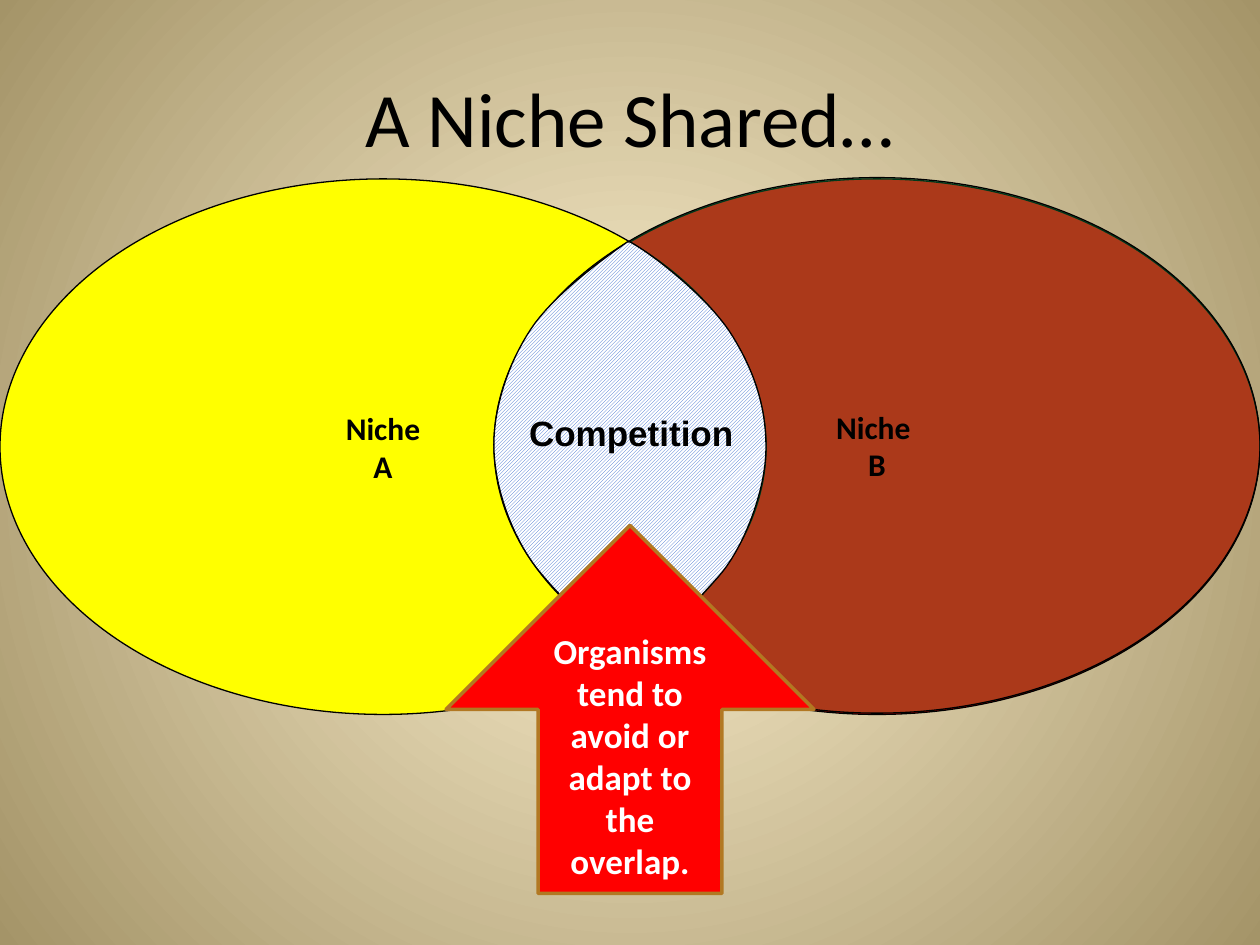
"""Build a slide with two overlapping niches and the competition between them."""
import pptx
import pptx.dml.color
import pptx.enum.dml
import pptx.enum.shapes
import pptx.enum.text
import pptx.oxml
import pptx.oxml.ns
import pptx.util

RGBColor = pptx.dml.color.RGBColor
BLACK = RGBColor(0x00, 0x00, 0x00)
WHITE = RGBColor(0xFF, 0xFF, 0xFF)
RED = RGBColor(0xFF, 0x00, 0x00)
YELLOW = RGBColor(0xFF, 0xFF, 0x00)
GREEN = RGBColor(0x00, 0xB0, 0x50)
BLUE = RGBColor(0x33, 0x66, 0xCC)
BRONZE = RGBColor(0xB2, 0x78, 0x22)
CREAM = RGBColor(0xFF, 0xF3, 0xD2)
KHAKI = RGBColor(0xA4, 0x94, 0x68)
COLUMNS, ROWS = 100, 75
CENTER = pptx.enum.text.PP_ALIGN.CENTER
MIDDLE = pptx.enum.text.MSO_ANCHOR.MIDDLE
SHAPES = pptx.enum.shapes.MSO_SHAPE

presentation = pptx.Presentation()
presentation.slide_width = pptx.util.Inches(10)
presentation.slide_height = pptx.util.Inches(7.5)
column = presentation.slide_width // COLUMNS
row = presentation.slide_height // ROWS
slide = presentation.slides.add_slide(presentation.slide_layouts[6])


def write(shape, text, size, color, bold=True, font="Calibri", wrap=True, anchor=MIDDLE):
    frame = shape.text_frame
    frame.text = text
    frame.word_wrap = wrap
    frame.vertical_anchor = anchor
    for paragraph in frame.paragraphs:
        paragraph.alignment = CENTER
        for run in paragraph.runs:
            run.font.name = font
            run.font.size = pptx.util.Pt(size)
            run.font.bold = bold
            run.font.color.rgb = color


def add_filled(kind, left, top, width, height, fill, line, line_width):
    shape = slide.shapes.add_shape(
        kind, int(left * column), int(top * row), int(width * column), int(height * row))
    shape.shadow.inherit = False
    shape.fill.solid()
    shape.fill.fore_color.rgb = fill
    shape.line.color.rgb = line
    shape.line.width = pptx.util.Pt(line_width)
    return shape


background = slide.background.fill
background.gradient()
for stop, color, position in zip(background.gradient_stops, (CREAM, KHAKI), (0, 1)):
    stop.color.rgb = color
    stop.position = position
linear = next(slide.element.iter(pptx.oxml.ns.qn("a:lin")))
linear.getparent().replace(linear, pptx.oxml.parse_xml(
    f'<a:path {pptx.oxml.ns.nsdecls("a")} path="circle">'
    '<a:fillToRect l="50000" t="50000" r="50000" b="50000"/></a:path>'))

title = slide.shapes.add_textbox(5 * column, 3 * row, 90 * column, int(12.5 * row))
write(title, "A Niche Shared…", 44, BLACK, bold=False)

niche_width, niche_height, niche_top = 60.8, 42.5, 14.2
right_niche = COLUMNS - niche_width
for left, top, color, label in (
    (right_niche, niche_top, RED, ""),
    (0, niche_top, YELLOW, "Niche\nA"),
    (right_niche, niche_top - 0.1, GREEN, "Niche \nB"),
):
    niche = add_filled(SHAPES.OVAL, left, top, niche_width, niche_height, color, BLACK, 0.75)
    write(niche, label, 18, BLACK, wrap=False)
niche_color = next(niche.element.iter(pptx.oxml.ns.qn("a:srgbClr")))
niche_color.append(pptx.oxml.parse_xml(
    f'<a:alpha {pptx.oxml.ns.nsdecls("a")} val="33000"/>'))

start = (49.8, 19.2)
curves = (
    ((47.8, 20.6), (44.5, 23), (42.5, 25.6)),
    ((40.6, 28.2), (39.2, 32), (39.2, 35.3)),
    ((39.2, 38.6), (40.6, 42.5), (42.6, 45.1)),
    ((44.7, 47.7), (46.4, 49.2), (50, 51.8)),
    ((53.1, 50.2), (55.2, 47.8), (57, 45.8)),
    ((58.9, 43.7), (60.8, 39.1), (60.8, 35.5)),
    ((60.8, 32), (59.7, 29.1), (57.9, 26.3)),
    ((56.1, 23.6), (52, 20.3), (50, 19.2)),
)
steps = 16
points = []
corner = start
for curve in curves:
    for step in range(1, steps + 1):
        t = step / steps
        weights = ((1 - t) ** 3, 3 * t * (1 - t) ** 2, 3 * t ** 2 * (1 - t), t ** 3)
        x, y = (sum(weight * value for weight, value in zip(weights, axis))
                for axis in zip(corner, *curve))
        points.append((x * column, y * row))
    corner = curve[-1]
builder = slide.shapes.build_freeform(start[0] * column, start[1] * row)
builder.add_line_segments(points, close=True)
overlap = builder.convert_to_shape()
overlap.shadow.inherit = False
overlap.fill.patterned()
overlap.fill.pattern = pptx.enum.dml.MSO_PATTERN.DARK_UPWARD_DIAGONAL
overlap.fill.fore_color.rgb = BLUE
overlap.fill.back_color.rgb = WHITE
overlap.line.color.rgb = BLACK
overlap.line.width = pptx.util.Pt(0.75)

competition = slide.shapes.add_textbox(
    41 * column, int(32.2 * row), int(18.2 * column), int(4.3 * row))
write(competition, "Competition", 20, BLACK, font="Arial", wrap=False,
      anchor=pptx.enum.text.MSO_ANCHOR.TOP)
competition.text_frame.auto_size = pptx.enum.text.MSO_AUTO_SIZE.SHAPE_TO_FIT_TEXT
competition.text_frame.paragraphs[0].alignment = pptx.enum.text.PP_ALIGN.LEFT

arrow_size = 29.2
arrow = add_filled(SHAPES.UP_ARROW, (COLUMNS - arrow_size) / 2, 41.7,
                   arrow_size, arrow_size, RED, BRONZE, 2)
write(arrow, "Organisms tend to avoid or adapt to the overlap.", 20, WHITE)

presentation.save("out.pptx")
